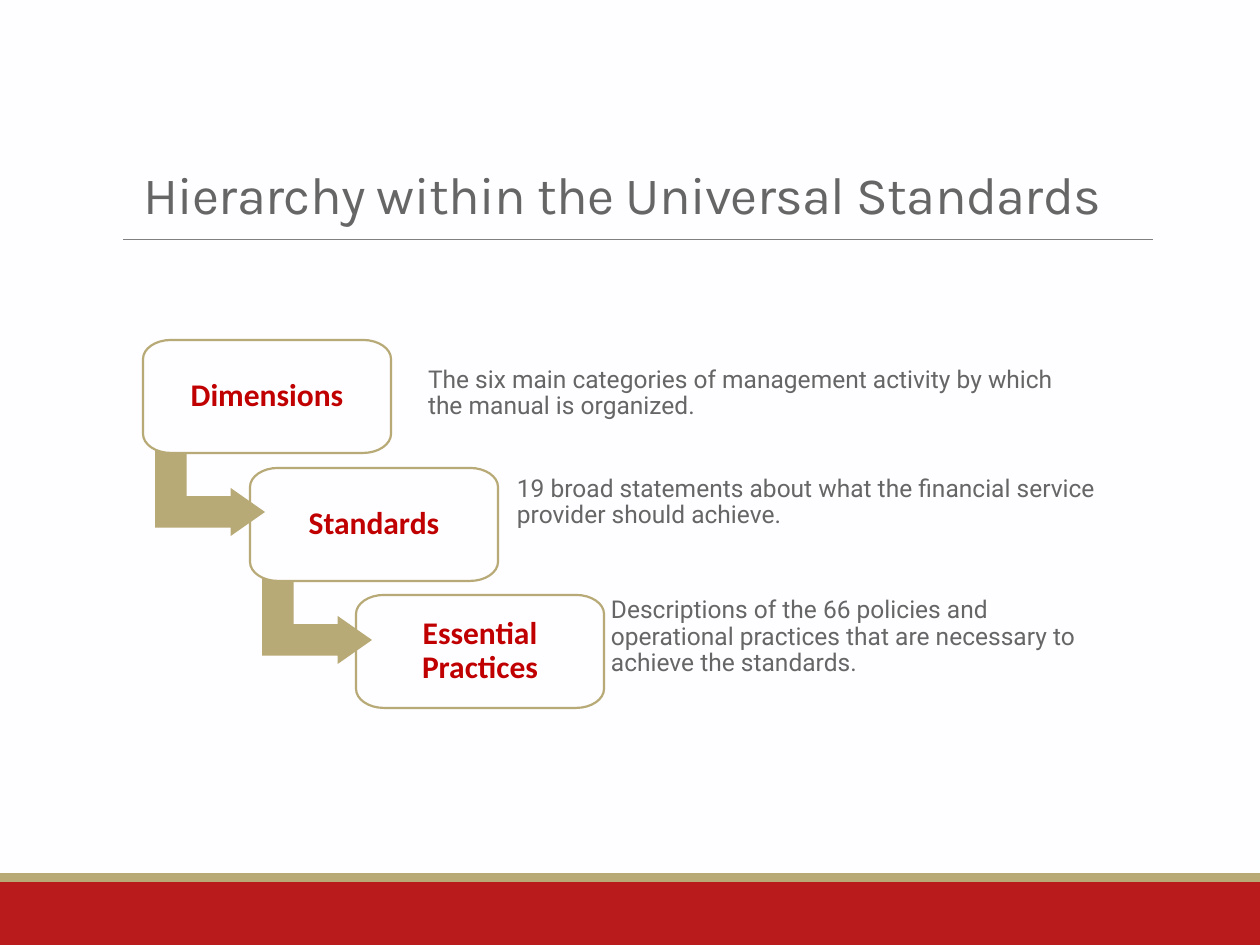
from lxml.etree import SubElement
from pptx import Presentation
from pptx.dml.color import RGBColor
from pptx.enum.shapes import MSO_CONNECTOR, MSO_SHAPE
from pptx.enum.text import MSO_ANCHOR, MSO_AUTO_SIZE, PP_ALIGN
from pptx.oxml.ns import qn
from pptx.util import Inches, Pt

PX = Inches(1) / 126
CURVE = 0.55  # control point distance of a quarter ellipse

PAPER = RGBColor(0xFE, 0xFD, 0xFF)
RED = RGBColor(0xB9, 0x1A, 0x1B)
GOLD = RGBColor(0xB8, 0xAA, 0x76)
GREY_TEXT = RGBColor(0x66, 0x66, 0x66)
RULE_GREY = RGBColor(0x80, 0x80, 0x80)
LABEL_RED = RGBColor(0xC0, 0x00, 0x00)


def px(*lengths):
    return [round(length * PX) for length in lengths]


def write_text(frame, text, *, font, size, color, bold=False, align=PP_ALIGN.LEFT,
               anchor=MSO_ANCHOR.MIDDLE, line_spacing=0.9, insets=(8, 8), tracking=None):
    frame.word_wrap = True
    frame.auto_size = MSO_AUTO_SIZE.NONE
    frame.vertical_anchor = anchor
    side, end = px(*insets)
    frame.margin_left = frame.margin_right = side
    frame.margin_top = frame.margin_bottom = end
    paragraph = frame.paragraphs[0]
    paragraph.alignment = align
    paragraph.line_spacing = line_spacing
    run = paragraph.add_run()
    run.text = text
    run.font.name = font
    run.font.size = Pt(size)
    run.font.bold = bold
    run.font.color.rgb = color
    if tracking is not None:
        run.font._element.set("spc", str(tracking))


def round_corners(shape):
    """Turn every other segment of an eight-point outline into a quarter ellipse."""
    path = shape._element.spPr.find(".//" + qn("a:path"))
    points = [(int(pt.get("x")), int(pt.get("y"))) for pt in path.iter(qn("a:pt"))]
    segments = path.findall(qn("a:lnTo"))
    for index in range(0, 8, 2):
        (x1, y1), (x2, y2) = points[index], points[index + 1]
        corner_x, corner_y = (x1, y2) if index % 4 == 0 else (x2, y1)
        segment = segments[index]
        segment.clear()
        segment.tag = qn("a:cubicBezTo")
        for x, y in ((x1 + CURVE * (corner_x - x1), y1 + CURVE * (corner_y - y1)),
                     (x2 + CURVE * (corner_x - x2), y2 + CURVE * (corner_y - y2)),
                     (x2, y2)):
            SubElement(segment, qn("a:pt"), x=str(round(x)), y=str(round(y)))


class SlideBuilder:
    """Holds the style and the current slide."""

    title_style = dict(font="Karla", size=30, color=GREY_TEXT, insets=(12, 6),
                       anchor=MSO_ANCHOR.BOTTOM, line_spacing=0.85, tracking=-37)
    label_style = dict(font="Calibri", size=18, color=LABEL_RED, bold=True,
                       align=PP_ALIGN.CENTER, insets=(13, 13))
    description_style = dict(font="Roboto", size=14, color=GREY_TEXT)

    def __init__(self, slide):
        self.shapes = slide.shapes
        slide.background.fill.solid()
        slide.background.fill.fore_color.rgb = PAPER

    def title(self, text, left, top, width, height):
        title = self.shapes.title
        title.left, title.top, title.width, title.height = px(left, top, width, height)
        write_text(title.text_frame, text, **self.title_style)

    def solid(self, preset, color, left, top, width, height):
        shape = self.shapes.add_shape(preset, *px(left, top, width, height))
        shape.shadow.inherit = False
        shape.fill.solid()
        shape.fill.fore_color.rgb = color
        shape.line.fill.background()
        return shape

    def rule(self, left, right, y):
        rule = self.shapes.add_connector(MSO_CONNECTOR.STRAIGHT, *px(left, y, right, y))
        rule.line.color.rgb = RULE_GREY
        rule.line.width = Pt(0.5)
        SubElement(rule._element.spPr, qn("a:effectLst"))

    def outline(self, points):
        start, *others = [px(*point) for point in points]
        builder = self.shapes.build_freeform(*start)
        builder.add_line_segments(others, close=True)
        shape = builder.convert_to_shape()
        shape.shadow.inherit = False
        return shape

    def description(self, text, left, top, width, height):
        right, bottom = left + width, top + height
        area = self.outline([(left, top), (right, top), (right, bottom), (left, bottom)])
        area.fill.background()
        area.line.fill.background()
        write_text(area.text_frame, text, **self.description_style)

    def level_box(self, text, left, top, width, height, radius_x=28, radius_y=19):
        right, bottom = left + width, top + height
        box = self.outline([
            (left, top + radius_y), (left + radius_x, top),
            (right - radius_x, top), (right, top + radius_y),
            (right, bottom - radius_y), (right - radius_x, bottom),
            (left + radius_x, bottom), (left, bottom - radius_y)])
        round_corners(box)
        box.fill.solid()
        box.fill.fore_color.rgb = PAPER
        box.line.color.rgb = GOLD
        box.line.width = Pt(1.25)
        write_text(box.text_frame, text, **self.label_style)

    def step_arrow(self, left, top):
        arrow = self.solid(MSO_SHAPE.BENT_UP_ARROW, GOLD, left, top, 96, 110)
        arrow.rotation = 90
        for index, value in enumerate((0.328, 0.25, 0.358)):
            arrow.adjustments[index] = value


LEVELS = [
    ("Dimensions",
     "The six main categories of management activity by which the manual is organized.",
     (420, 342, 663, 103)),
    ("Standards",
     "19 broad statements about what the financial service provider should achieve.",
     (509, 451, 595, 103)),
    ("Essential Practices",
     "Descriptions of the 66 policies and operational practices that are necessary "
     "to achieve the standards.",
     (603, 567, 501, 141)),
]


def main():
    presentation = Presentation()
    presentation.slide_width, presentation.slide_height = Inches(10), Inches(7.5)
    page = SlideBuilder(presentation.slides.add_slide(presentation.slide_layouts[5]))

    # Footer bands, title and its rule
    page.solid(MSO_SHAPE.RECTANGLE, RED, 0, 882, 1260, 63)
    page.solid(MSO_SHAPE.RECTANGLE, GOLD, 0, 873, 1260, 9)
    page.rule(123, 1153, 239)
    page.title("Hierarchy within the Universal Standards", 131, 113, 1040, 118)

    # Descriptions beside the levels
    for _, description, place in LEVELS:
        page.description(description, *place)

    # Staircase, built from the lowest level up so each box covers its arrow's tail
    for index, (label, _, _) in reversed(list(enumerate(LEVELS))):
        left, top = 143 + (213 * index + 1) // 2, 340 + (255 * index + 1) // 2
        if index < len(LEVELS) - 1:
            page.step_arrow(left + 19, top + 93)
        page.level_box(label, left, top, 248, 113)

    presentation.save("out.pptx")


if __name__ == "__main__":
    main()
